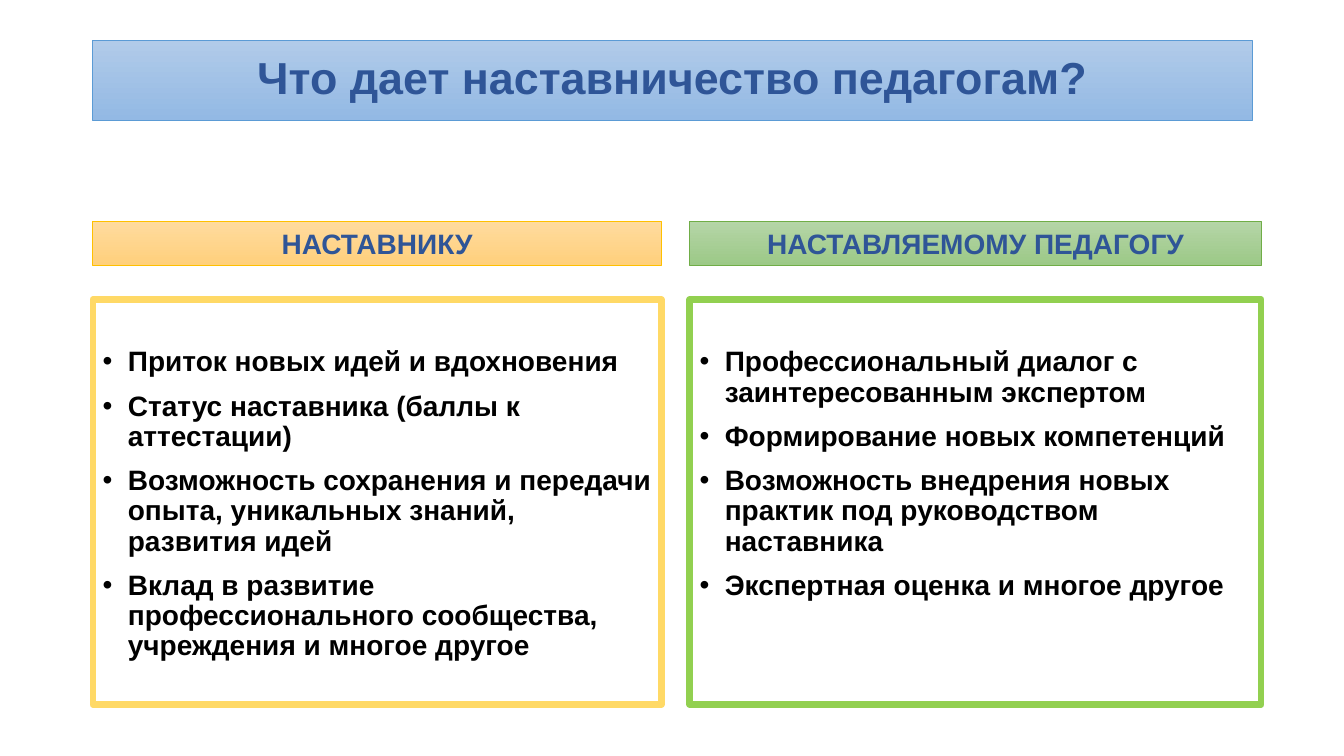
from pptx import Presentation
from pptx.dml.color import RGBColor
from pptx.enum.shapes import MSO_SHAPE
from pptx.enum.text import MSO_ANCHOR, MSO_AUTO_SIZE, PP_ALIGN
from pptx.oxml.ns import qn
from pptx.util import Inches, Pt
from lxml import etree

RECT = MSO_SHAPE.RECTANGLE
TOP, MIDDLE, BOTTOM = MSO_ANCHOR.TOP, MSO_ANCHOR.MIDDLE, MSO_ANCHOR.BOTTOM
NO_AUTOFIT = MSO_AUTO_SIZE.NONE
LEFT, CENTER = PP_ALIGN.LEFT, PP_ALIGN.CENTER

COLORS = {
    "heading": "2F5597", "body": "000000",
    "blue_light": "B1CBE9", "blue_dark": "93B9E4", "blue_line": "5B9BD5",
    "gold_light": "FFDB9E", "gold_dark": "FFD07C", "gold_line": "FFC000",
    "gold_frame": "FFD966",
    "green_light": "B5D5A7", "green_dark": "9CC987", "green_line": "70AD47",
    "green_frame": "92D050",
}


def style_banner(banner, hue, text, size, anchor):
    banner.fill.gradient()
    banner.fill.gradient_angle = 270
    for stop, shade, position in zip(banner.fill.gradient_stops, ("light", "dark"), (0, 1)):
        stop.color.rgb = RGBColor.from_string(COLORS[f"{hue}_{shade}"])
        stop.position = position
    banner.line.color.rgb = RGBColor.from_string(COLORS[f"{hue}_line"])
    banner.line.width = Pt(0.5)
    write_text(banner.text_frame, [text], size, "heading", anchor, CENTER)


def write_text(frame, lines, size, color, anchor, alignment):
    frame.text = "\n".join(lines)
    frame.word_wrap = True
    frame.auto_size = NO_AUTOFIT
    frame.vertical_anchor = anchor
    for index, paragraph in enumerate(frame.paragraphs):
        paragraph.alignment = alignment
        paragraph.line_spacing = 0.9
        paragraph.space_before = Pt(10 if index else 0)
        for run in paragraph.runs:
            run.font.name = "Arial"
            run.font.size = Pt(size)
            run.font.bold = True
            run.font.color.rgb = RGBColor.from_string(COLORS[color])


prs = Presentation()
prs.slide_width = Inches(13.33)
prs.slide_height = Inches(7.5)
slide = prs.slides.add_slide(prs.slide_layouts[5])

title = slide.shapes.title
title.left, title.top = Inches(0.92), Inches(0.4)
title.width, title.height = Inches(11.5), Inches(0.79)
style_banner(title, "blue", "Что дает наставничество педагогам?", 32, MIDDLE)

columns = [
    (0.92, 5.64, "gold", "НАСТАВНИКУ", [
        "Приток новых идей и вдохновения",
        "Статус наставника (баллы к аттестации)",
        "Возможность сохранения и передачи опыта, уникальных знаний, развития идей",
        "Вклад в развитие профессионального сообщества, учреждения и многое другое",
    ]),
    (6.84, 5.67, "green", "НАСТАВЛЯЕМОМУ ПЕДАГОГУ", [
        "Профессиональный диалог с заинтересованным экспертом",
        "Формирование новых компетенций",
        "Возможность внедрения новых практик под руководством наставника",
        "Экспертная оценка и многое другое",
    ]),
]

for left, width, hue, audience, benefits in columns:
    header = slide.shapes.add_shape(RECT, Inches(left), Inches(2.2), Inches(width), Inches(0.43))
    header.shadow.inherit = False
    style_banner(header, hue, audience, 20, BOTTOM)

    panel = slide.shapes.add_shape(RECT, Inches(left), Inches(2.97), Inches(width), Inches(4.02))
    panel.shadow.inherit = False
    panel.fill.background()
    panel.line.color.rgb = RGBColor.from_string(COLORS[f"{hue}_frame"])
    panel.line.width = Pt(4.5)
    write_text(panel.text_frame, benefits, 20, "body", TOP, LEFT)
    panel.text_frame.margin_top = Inches(0.48)
    for benefit in panel.text_frame.paragraphs:
        properties = benefit._p.get_or_add_pPr()
        properties.set("marL", str(Inches(0.25)))
        properties.set("indent", str(-Inches(0.25)))
        etree.SubElement(properties, qn("a:buFont")).set("typeface", "Arial")
        etree.SubElement(properties, qn("a:buChar")).set("char", "•")

prs.save("out.pptx")
